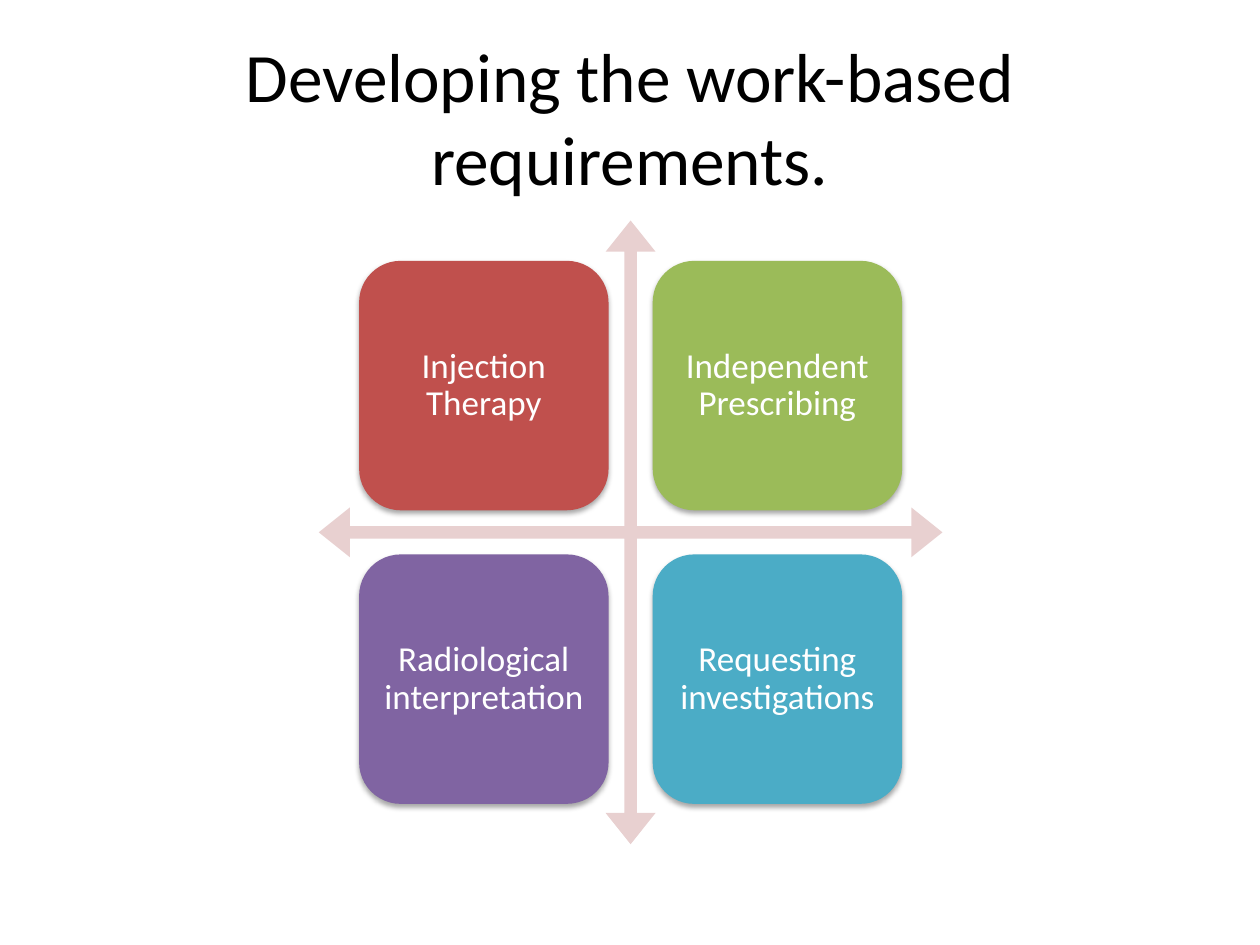
from lxml.etree import SubElement
from pptx import Presentation
from pptx.dml.color import RGBColor
from pptx.enum.shapes import MSO_SHAPE
from pptx.enum.text import MSO_ANCHOR, MSO_AUTO_SIZE, PP_ALIGN
from pptx.oxml.ns import qn
from pptx.util import Inches, Pt

BLACK = RGBColor(0x00, 0x00, 0x00)
WHITE = RGBColor(0xFF, 0xFF, 0xFF)
PINK = RGBColor(0xE8, 0xD0, 0xD0)
RED = RGBColor(0xC0, 0x50, 0x4D)
GREEN = RGBColor(0x9B, 0xBB, 0x59)
PURPLE = RGBColor(0x80, 0x64, 0xA2)
TEAL = RGBColor(0x4B, 0xAC, 0xC6)

TOPICS = [
    ("Injection Therapy", RED),
    ("Independent Prescribing", GREEN),
    ("Radiological interpretation", PURPLE),
    ("Requesting investigations", TEAL),
]
LEFT, TOP, SIDE, STEP = 2.85, 2.07, 1.98, 2.33


def set_text(frame, text, size, color):
    frame.text = text
    frame.word_wrap = True
    frame.auto_size = MSO_AUTO_SIZE.NONE
    frame.vertical_anchor = MSO_ANCHOR.MIDDLE
    para = frame.paragraphs[0]
    para.alignment = PP_ALIGN.CENTER
    para.font.name = "Calibri"
    para.font.size = Pt(size)
    para.font.color.rgb = color
    return para


def add_title(slide, text):
    title = slide.shapes.title
    title.left, title.top = Inches(0.5), Inches(0.3)
    title.width, title.height = Inches(9), Inches(1.25)
    set_text(title.text_frame, text, 39.6, BLACK)


def add_solid(shapes, kind, left, top, side, color):
    """Add a square, borderless shape without a shadow."""
    shape = shapes.add_shape(
        kind, Inches(left), Inches(top), Inches(side), Inches(side))
    shape.shadow.inherit = False
    shape.fill.solid()
    shape.fill.fore_color.rgb = color
    shape.line.fill.background()
    return shape


def add_shadow(shape):
    """Give the shape a soft shadow straight below it."""
    effects = shape.element.spPr.find(qn("a:effectLst"))
    outer = SubElement(
        effects, qn("a:outerShdw"), blurRad=str(Pt(3.1)), dist=str(Pt(1.8)),
        dir="5400000", rotWithShape="0")
    color = SubElement(outer, qn("a:srgbClr"), val="000000")
    SubElement(color, qn("a:alpha"), val="35000")


def add_cross(shapes):
    cross = add_solid(shapes, MSO_SHAPE.QUAD_ARROW, 2.53, 1.75, 4.95, PINK)
    for i, value in enumerate((0.02, 0.04, 0.05)):
        cross.adjustments[i] = value


def add_tile(shapes, left, top, text, color):
    tile = add_solid(
        shapes, MSO_SHAPE.ROUNDED_RECTANGLE, left, top, SIDE, color)
    add_shadow(tile)
    frame = tile.text_frame
    frame.margin_left = frame.margin_right = Inches(0.08)
    frame.margin_top = frame.margin_bottom = Inches(0.08)
    set_text(frame, text, 20, WHITE).line_spacing = 0.9


def main():
    prs = Presentation()
    prs.slide_width, prs.slide_height = Inches(10), Inches(7.5)
    slide = prs.slides.add_slide(prs.slide_layouts[5])
    add_title(slide, "Developing the work-based requirements.")
    matrix = slide.shapes.add_group_shape().shapes
    add_cross(matrix)
    for i, (text, color) in enumerate(TOPICS):
        row, col = divmod(i, 2)
        add_tile(matrix, LEFT + col * STEP, TOP + row * STEP, text, color)
    prs.save("out.pptx")


if __name__ == "__main__":
    main()
